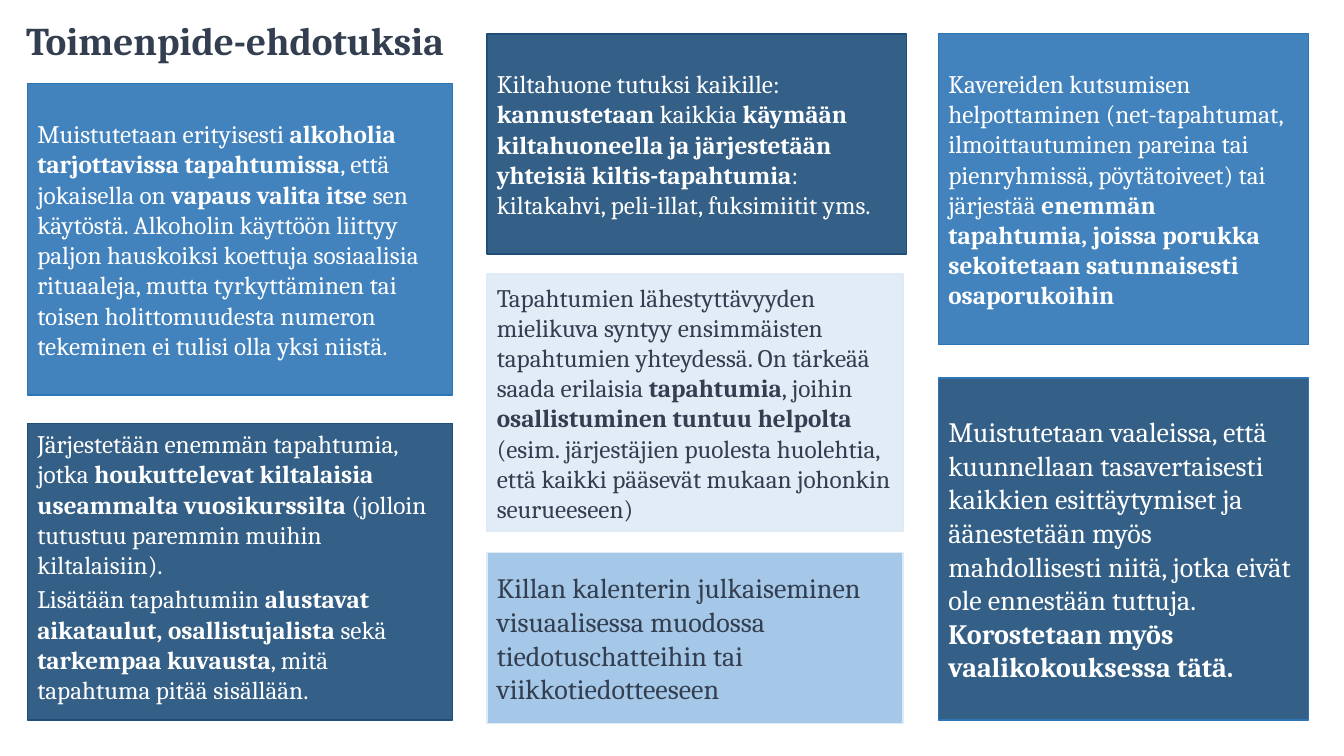
from dataclasses import dataclass

from lxml.etree import SubElement
from pptx import Presentation
from pptx.dml.color import RGBColor
from pptx.enum.shapes import MSO_SHAPE as SHAPE
from pptx.enum.text import MSO_ANCHOR as ANCHOR, PP_ALIGN as ALIGN
from pptx.oxml.ns import qn
from pptx.util import Cm, Pt

FONT = "Cambria"
COLORS = {
    "navy": "1F4E79",
    "blue": "2E75B6",
    "sky": "9DC3E6",
    "pale": "DEEBF7",
    "slate": "333F50",
    "white": "FFFFFF",
}


@dataclass
class Card:
    top: float
    width: float
    height: float
    fill: str
    line: str
    paragraphs: list
    ink: str = "white"
    size: int = 18
    anchor: ANCHOR = ANCHOR.MIDDLE
    before: int = 0
    after: int = 3


LEFT_CARDS = [
    Card(2.11, 10.72, 7.85, "blue", "blue", [
        "Muistutetaan erityisesti **alkoholia tarjottavissa tapahtumissa**, että jokaisella on "
        "**vapaus valita itse** sen käytöstä. Alkoholin käyttöön liittyy paljon hauskoiksi "
        "koettuja sosiaalisia rituaaleja, mutta tyrkyttäminen tai toisen holittomuudesta "
        "numeron tekeminen ei tulisi olla yksi niistä."], before=12, after=0),
    Card(10.67, 10.72, 7.47, "navy", "navy", [
        "Järjestetään enemmän tapahtumia, jotka **houkuttelevat kiltalaisia useammalta "
        "vuosikurssilta** (jolloin tutustuu paremmin muihin kiltalaisiin).",
        "Lisätään tapahtumiin** alustavat aikataulut, osallistujalista **sekä** tarkempaa "
        "kuvausta**, mitä tapahtuma pitää sisällään."], anchor=ANCHOR.TOP),
]
MIDDLE_CARDS = [
    Card(0.86, 10.57, 5.54, "navy", "navy", [
        "Kiltahuone tutuksi kaikille: **kannustetaan** kaikkia **käymään kiltahuoneella ja "
        "järjestetään yhteisiä kiltis-tapahtumia**: kiltakahvi, peli-illat, fuksimiitit yms."]),
    Card(6.91, 10.49, 6.48, "pale", "pale", [
        "Tapahtumien lähestyttävyyden mielikuva syntyy ensimmäisten tapahtumien yhteydessä. "
        "On tärkeää saada erilaisia **tapahtumia**, joihin **osallistuminen tuntuu helpolta "
        "**(esim. järjestäjien puolesta huolehtia, että kaikki pääsevät mukaan johonkin "
        "seurueeseen)"], ink="slate"),
    Card(13.92, 10.49, 4.32, "sky", "pale", [
        "Killan kalenterin julkaiseminen visuaalisessa muodossa tiedotuschatteihin tai "
        "viikkotiedotteeseen"], ink="slate", size=20),
]
RIGHT_CARDS = [
    Card(0.84, 9.32, 7.85, "blue", "blue", [
        "Kavereiden kutsumisen helpottaminen (net-tapahtumat, ilmoittautuminen pareina tai "
        "pienryhmissä, pöytätoiveet) tai järjestää **enemmän tapahtumia, joissa porukka "
        "sekoitetaan satunnaisesti osaporukoihin**"]),
    Card(9.53, 9.32, 8.61, "navy", "blue", [
        "Muistutetaan vaaleissa, että kuunnellaan tasavertaisesti kaikkien esittäytymiset ja "
        "äänestetään myös mahdollisesti niitä, jotka eivät ole ennestään tuttuja. "
        "**Korostetaan myös vaalikokouksessa tätä.**"], size=20),
]


def rgb(name):
    return RGBColor.from_string(COLORS[name])


def add_runs(p, marked, size, ink):
    p.alignment = ALIGN.LEFT
    for i, text in enumerate(marked.split("**")):
        if text:
            r = p.add_run()
            r.text = text
            r.font.name = FONT
            r.font.size = Pt(size)
            r.font.bold = i % 2 == 1
            r.font.color.rgb = rgb(ink)


def add_title(slide, left, top, width, height):
    tf = slide.shapes.add_textbox(Cm(left), Cm(top), Cm(width), Cm(height)).text_frame
    tf.word_wrap = True
    tf.vertical_anchor = ANCHOR.TOP
    tf.margin_top = Cm(0.18)
    p = tf.paragraphs[0]
    p.line_spacing = 0.9
    add_runs(p, "**Toimenpide-ehdotuksia**", 28, "slate")


def add_card(slide, left, card):
    sp = slide.shapes.add_shape(SHAPE.RECTANGLE, Cm(left), Cm(card.top),
                                Cm(card.width), Cm(card.height))
    sp.shadow.inherit = False
    sp.fill.solid()
    sp.fill.fore_color.rgb = rgb(card.fill)
    color = sp.element.spPr.find(qn("a:solidFill"))[0]
    SubElement(color, qn("a:alpha")).set("val", "90000")
    sp.line.color.rgb = rgb(card.line)
    sp.line.width = Pt(1)
    tf = sp.text_frame
    tf.word_wrap = True
    tf.vertical_anchor = card.anchor
    for i, marked in enumerate(card.paragraphs):
        p = tf.add_paragraph() if i else tf.paragraphs[0]
        p.space_before = Pt(card.before)
        p.space_after = Pt(card.after)
        add_runs(p, marked, card.size, card.ink)


def add_column(slide, left, cards):
    for card in cards:
        add_card(slide, left, card)


def main():
    prs = Presentation()
    prs.slide_width = Cm(33.87)
    prs.slide_height = Cm(19.05)
    slide = prs.slides.add_slide(prs.slide_layouts[6])
    add_title(slide, 0.41, 0.36, 20.02, 2.44)
    add_column(slide, 0.69, LEFT_CARDS)
    add_column(slide, 12.27, MIDDLE_CARDS)
    add_column(slide, 23.65, RIGHT_CARDS)
    prs.save("out.pptx")


if __name__ == "__main__":
    main()
